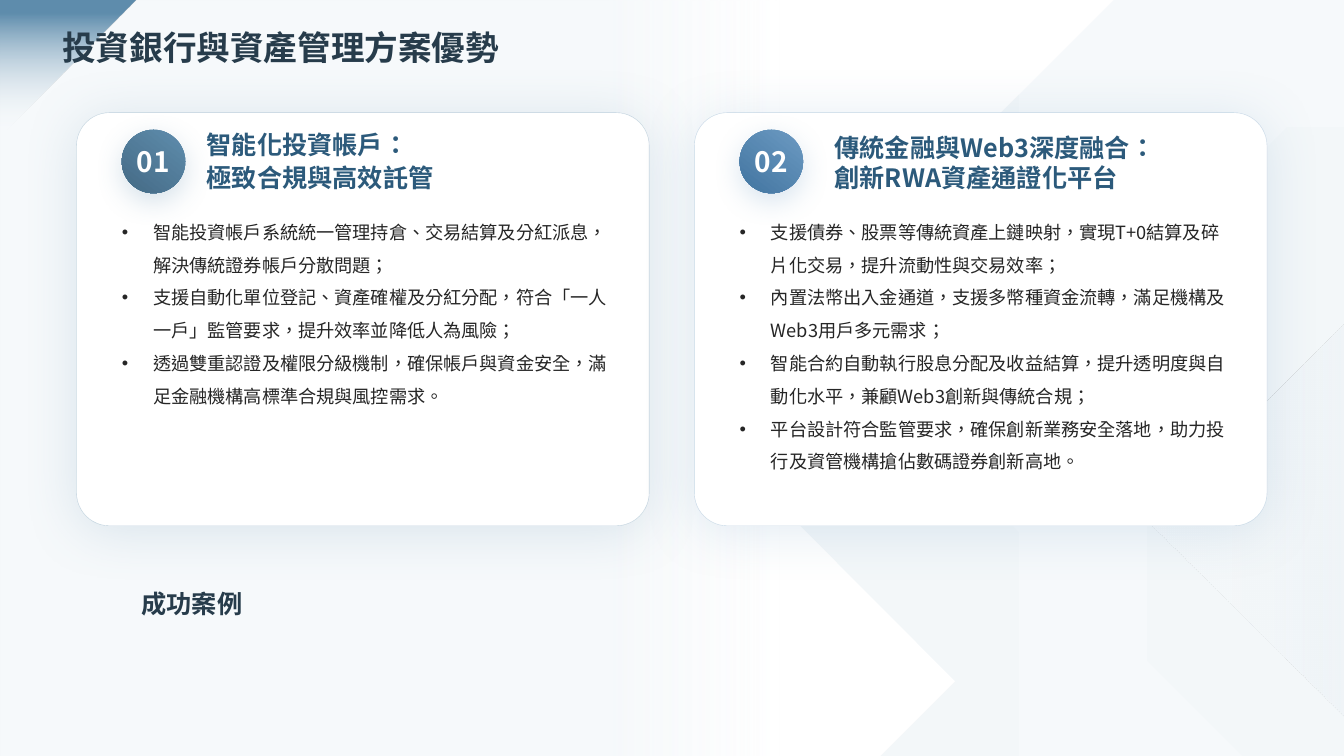
from lxml import etree
from pptx import Presentation
from pptx import util as u
from pptx.dml.color import RGBColor
from pptx.enum import shapes, text
from pptx.oxml import ns

FONT = "Noto Sans CJK SC"
WIDTH, HEIGHT = 33.87, 19.05
COLORS = {
    "mist": "F6F9FB", "haze": "F3F7F9", "frost": "EFF4F8", "white": "FFFFFF",
    "steel": "5F8DAD", "steel_dark": "446A85", "sky": "6C9AC2", "sky_dark": "4275A0",
    "title": "273C4B", "heading": "2C5A7B", "body": "262626",
}
FACETS = [
    ([(28.07, 0), (WIDTH, 0), (WIDTH, HEIGHT), (22.2, HEIGHT), (24.08, 17.17), (17.5, 10.57)],
     [(0, "mist", 100), (100, "haze", 100)], 180),
    ([(32.44, 3.2), (WIDTH, 3.2), (WIDTH, HEIGHT), (31.32, HEIGHT), (23.95, 11.68)],
     [(0, "mist", 100), (100, "haze", 100)], 0),
    ([(WIDTH, 8.15), (WIDTH, 18.06), (28.91, 13.11)],
     [(0, "mist", 100), (57, "haze", 100), (100, "frost", 70)], 0),
]
CARDS = [
    {"number": "01", "tone": "steel", "heading_left": 3.28, "spacing": 1.1,
     "heading": ["智能化投資帳戶：", "極致合規與高效託管"],
     "points": [
         "智能投資帳戶系統統一管理持倉、交易結算及分紅派息，解決傳統證券帳戶分散問題；",
         "支援自動化單位登記、資產確權及分紅分配，符合「一人一戶」監管要求，提升效率並降低人為風險；",
         "透過雙重認證及權限分級機制，確保帳戶與資金安全，滿足金融機構高標準合規與風控需求。"]},
    {"number": "02", "tone": "sky", "heading_left": 3.53, "spacing": 1.0,
     "heading": ["傳統金融與Web3深度融合：", "創新RWA資產通證化平台"],
     "points": [
         "支援債券、股票等傳統資產上鏈映射，實現T+0結算及碎片化交易，提升流動性與交易效率；",
         "內置法幣出入金通道，支援多幣種資金流轉，滿足機構及Web3用戶多元需求；",
         "智能合約自動執行股息分配及收益結算，提升透明度與自動化水平，兼顧Web3創新與傳統合規；",
         "平台設計符合監管要求，確保創新業務安全落地，助力投行及資管機構搶佔數碼證券創新高地。"]},
]


def rgb(name):
    return RGBColor.from_string(COLORS[name])


def add_node(parent, tag, **attributes):
    node = etree.SubElement(parent, ns.qn(tag))
    for key, value in attributes.items():
        node.set(key, str(value))
    return node


def add_color(parent, name, opacity):
    color = add_node(parent, "a:srgbClr", val=COLORS[name])
    add_node(color, "a:alpha", val=opacity * 1000)


def set_opacity(properties, opacity):
    for color in properties.iter(ns.qn("a:srgbClr")):
        add_node(color, "a:alpha", val=opacity * 1000)


def fill_gradient(shape, stops, angle):
    shape.shadow.inherit = False
    shape.line.fill.background()
    shape.fill.background()
    properties = shape.fill._xPr
    gradient = etree.Element(ns.qn("a:gradFill"), rotWithShape="1")
    stop_list = add_node(gradient, "a:gsLst")
    for position, name, opacity in stops:
        add_color(add_node(stop_list, "a:gs", pos=position * 1000), name, opacity)
    add_node(gradient, "a:lin", ang=angle * 60000, scaled=0)
    properties.replace(properties.find(ns.qn("a:noFill")), gradient)


def add_shadow(shape, tone, opacity, blur, distance):
    effects = shape.fill._xPr.find(ns.qn("a:effectLst"))
    shadow = add_node(effects, "a:outerShdw", blurRad=u.Pt(blur), dist=u.Pt(distance),
                      dir=90 * 60000, algn="t", rotWithShape=0)
    add_color(shadow, tone, opacity)


def add_box(slide, kind, left, top, width, height):
    return slide.shapes.add_shape(kind, u.Cm(left), u.Cm(top), u.Cm(width), u.Cm(height))


def write(shape, lines, size, color, bold=True, anchor=text.MSO_ANCHOR.BOTTOM,
          align=text.PP_ALIGN.LEFT, spacing=None, bullet=False, wrap=True):
    frame = shape.text_frame
    frame.word_wrap = wrap
    frame.vertical_anchor = anchor
    frame.margin_left = frame.margin_right = frame.margin_top = frame.margin_bottom = 0
    for index, line in enumerate(lines):
        paragraph = frame.add_paragraph() if index else frame.paragraphs[0]
        paragraph.alignment = align
        paragraph.line_spacing = spacing
        if bullet:
            properties = paragraph._p.get_or_add_pPr()
            properties.set("marL", str(u.Cm(0.79)))
            properties.set("indent", str(-u.Cm(0.79)))
            add_node(properties, "a:buFont", typeface="Arial")
            add_node(properties, "a:buChar", char="•")
        run = paragraph.add_run()
        run.text = line
        run.font.size = u.Pt(size)
        run.font.bold = bold
        run.font.name = FONT
        run.font.color.rgb = rgb(color)
        run_properties = run._r.get_or_add_rPr()
        run_properties.set("lang", "zh-TW")
        add_node(run_properties, "a:ea", typeface=FONT)


def add_text(slide, left, top, width, height, lines, size, color, **options):
    box = slide.shapes.add_textbox(u.Cm(left), u.Cm(top), u.Cm(width), u.Cm(height))
    write(box, lines, size, color, **options)


def add_backdrop(slide, width, height):
    for points, stops, angle in FACETS:
        corners = [(u.Cm(x), u.Cm(y)) for x, y in points]
        builder = slide.shapes.build_freeform(*corners[0])
        builder.add_line_segments(corners[1:], close=True)
        fill_gradient(builder.convert_to_shape(), stops, angle)
    veil = add_box(slide, shapes.MSO_SHAPE.RECTANGLE, 0, 0, width, height)
    fill_gradient(veil, [(45, "mist", 100), (58, "mist", 0)], 0)
    corner = add_box(slide, shapes.MSO_SHAPE.RIGHT_TRIANGLE, 0, 0, 3.43, 3.43)
    corner.rotation = 90
    fill_gradient(corner, [(10, "steel", 100), (95, "mist", 0)], 0)


def add_panel(slide, left, top, width, height, tone, opacity):
    panel = add_box(slide, shapes.MSO_SHAPE.ROUNDED_RECTANGLE, left, top, width, height)
    panel.adjustments[0] = 0.08
    panel.shadow.inherit = False
    panel.fill.solid()
    panel.fill.fore_color.rgb = rgb("white")
    set_opacity(panel.fill._xPr, opacity)
    panel.line.width = u.Pt(0.25)
    panel.line.color.rgb = rgb(tone)
    set_opacity(panel.line._ln, 20)
    return panel


def add_card(slide, left, top, width, height, card):
    tone = card["tone"]
    inset, right = 1.14, width - 0.83
    base = add_panel(slide, left, top, width, height, tone, 100)
    add_shadow(base, tone, 20, 40, 4)
    add_panel(slide, left, top, width, height, tone, 20)
    badge = add_box(slide, shapes.MSO_SHAPE.OVAL, left + inset, top + 0.43, 1.6, 1.6)
    fill_gradient(badge, [(0, tone, 100), (100, tone + "_dark", 100)], 128)
    add_shadow(badge, tone, 25, 20, 6)
    write(badge, [card["number"]], 20, "white", anchor=text.MSO_ANCHOR.MIDDLE,
          align=text.PP_ALIGN.CENTER, wrap=False)
    add_text(slide, left + inset, top + 2.46, right - inset, 7.11, card["points"], 13, "body",
             bold=False, anchor=text.MSO_ANCHOR.TOP, spacing=1.5, bullet=True)
    add_text(slide, left + card["heading_left"], top + 0.74, right - card["heading_left"], 1.27,
             card["heading"], 18, "heading", spacing=card["spacing"])


def main():
    presentation = Presentation()
    presentation.slide_width = u.Cm(WIDTH)
    presentation.slide_height = u.Cm(HEIGHT)
    slide = presentation.slides.add_slide(presentation.slide_layouts[6])
    add_backdrop(slide, WIDTH, HEIGHT)
    for column, card in enumerate(CARDS):
        add_card(slide, 1.93 + column * 15.57, 2.84, 14.43, 10.41, card)
    add_text(slide, 1.57, 0.18, 31.45, 1.52, ["投資銀行與資產管理方案優勢"], 24, "title")
    add_text(slide, 2.51, 14.55, 4.65, 1.04, ["成功案例"], 18, "title",
             align=text.PP_ALIGN.CENTER)
    presentation.save("out.pptx")


if __name__ == "__main__":
    main()
